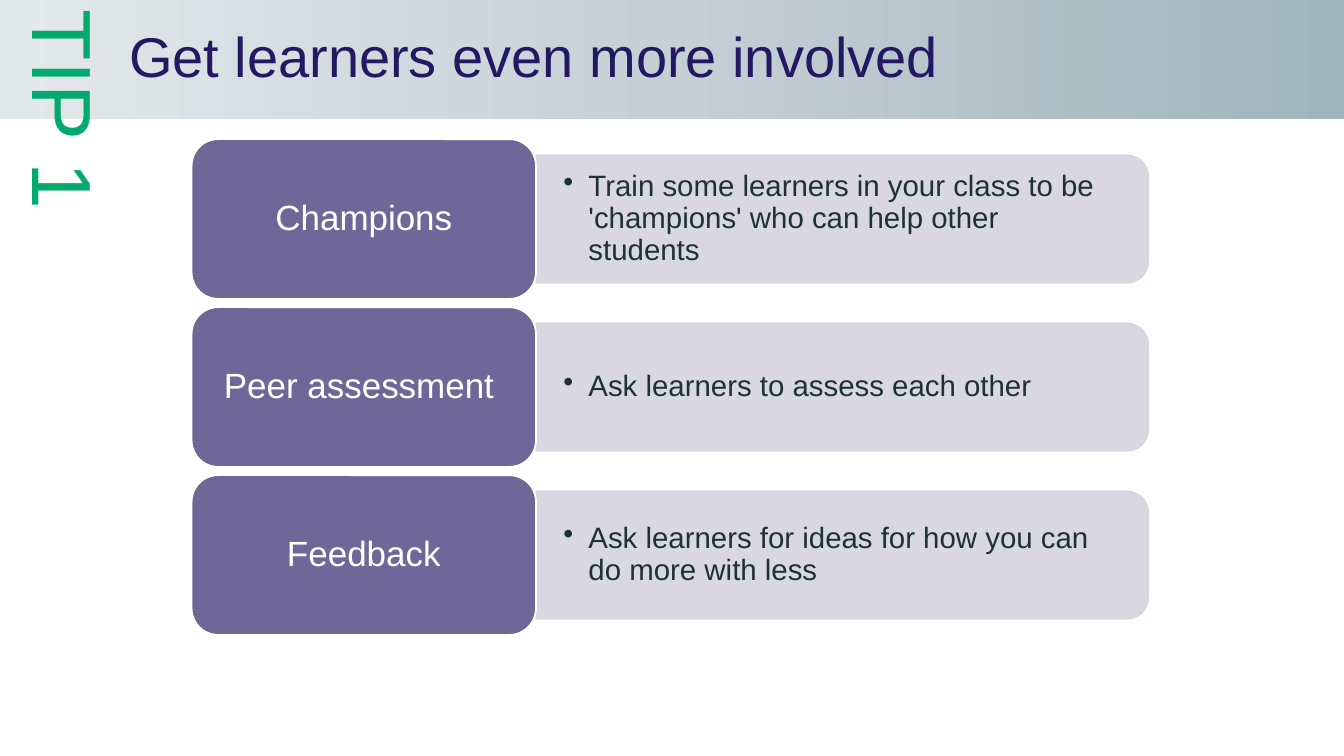
from copy import deepcopy
from pptx import Presentation
from pptx import util as u
from pptx.dml import color as dc
from pptx.enum import shapes as es, text as et
from pptx.oxml import parse_xml
from pptx.oxml import ns

HUES = {"title": "251863", "tip": "02AA6D", "label": "6F6798", "bar": "D5D3DD",
        "ink": "1D3138", "white": "FFFFFF"}
FADE = [("A0B4BD", 0), ("C5D0D5", 0.5), ("E3E8EA", 1)]
ROWS = [
    ("Champions", "Train some learners in your class to be 'champions' who can help other students"),
    ("Peer assessment ", "Ask learners to assess each other"),
    ("Feedback", "Ask learners for ideas for how you can do more with less"),
]


def hue(name):
    return dc.RGBColor.from_string(HUES[name])


def span(*sizes):
    return [u.Inches(size) for size in sizes]


def write(shape, words, size, color, align=et.PP_ALIGN.LEFT, left=0, hang=0,
          bullet=False, spacing=None, pads=(0.1, 0.05), anchor=et.MSO_ANCHOR.MIDDLE,
          fit=et.MSO_AUTO_SIZE.NONE):
    frame = shape.text_frame
    frame.word_wrap = True
    frame.auto_size = fit
    frame.vertical_anchor = anchor
    frame.margin_left = frame.margin_right = u.Inches(pads[0])
    frame.margin_top = frame.margin_bottom = u.Inches(pads[1])
    para = frame.paragraphs[0]
    para.alignment = align
    para.line_spacing = spacing
    props = para._p.get_or_add_pPr()
    props.set("marL", str(u.Inches(left)))
    props.set("indent", str(u.Inches(hang)))
    if bullet:
        props.append(parse_xml(f'<a:buChar {ns.nsdecls("a")} char="•"/>'))
    run = para.add_run()
    run.text = words
    run.font.name = "Arial"
    run.font.size = u.Pt(size)
    run.font.color.rgb = hue(color)


def panel(slide, kind, box, fill, line, width):
    shape = slide.shapes.add_shape(kind, *span(*box))
    shape.shadow.inherit = False
    shape.fill.solid()
    shape.fill.fore_color.rgb = hue(fill)
    shape.line.color.rgb = hue(line)
    shape.line.width = u.Pt(width)
    return shape


def fade(shape):
    shape.fill.gradient()
    shape.fill.gradient_angle = 180
    first = shape._element.spPr.find(".//" + ns.qn("a:gs"))
    first.addnext(deepcopy(first))
    for stop, (color, place) in zip(shape.fill.gradient_stops, FADE):
        stop.color.rgb = dc.RGBColor.from_string(color)
        stop.position = place


def header(slide, x, y, w, h):
    title = slide.shapes.title
    title.left, title.top, title.width, title.height = span(x, y, w, h)
    fade(title)
    write(title, "Get learners even more involved", 40, "title", left=1.18, spacing=0.9)


def tip(slide, x, y, w, h):
    side = slide.shapes.add_textbox(*span(x, y, w, h))
    write(side, "TIP 1", 60, "tip", align=et.PP_ALIGN.CENTER,
          anchor=et.MSO_ANCHOR.TOP, fit=et.MSO_AUTO_SIZE.SHAPE_TO_FIT_TEXT)
    side.text_frame._txBody.bodyPr.set("vert", "eaVert")


def row(slide, label, detail, x, y, w, h):
    split = 0.36 * w
    wide, high = w - split, 0.8 * h
    start, top = x + split, y + 0.1 * h
    bar = panel(slide, es.MSO_SHAPE.ROUND_2_SAME_RECTANGLE,
                (start + (wide - high) / 2, top + (high - wide) / 2, high, wide),
                "bar", "bar", 0.85)
    bar.rotation = 90
    for tint in bar._element.spPr.iter(ns.qn("a:srgbClr")):
        tint.append(parse_xml(f'<a:alpha {ns.nsdecls("a")} val="90000"/>'))
    note = slide.shapes.add_textbox(*span(start, top + 0.06, wide - 0.06, high - 0.12))
    write(note, detail, 21, "ink", left=0.25, hang=-0.25, bullet=True,
          spacing=0.9, pads=(0.27, 0.14))
    tab = panel(slide, es.MSO_SHAPE.ROUNDED_RECTANGLE, (x, y, split, h),
                "label", "white", 1.35)
    write(tab, label, 25, "white", align=et.PP_ALIGN.CENTER, spacing=0.9)


def table(slide, x, y, w, h, gap):
    high = (h - gap * (len(ROWS) - 1)) / len(ROWS)
    for place, (label, detail) in enumerate(ROWS):
        row(slide, label, detail, x, y + place * (high + gap), w, high)


def main():
    deck = Presentation()
    deck.slide_width, deck.slide_height = span(13.33, 7.5)
    slide = deck.slides.add_slide(deck.slide_layouts[5])
    header(slide, 0, 0, 13.33, 1.18)
    tip(slide, 0, 0, 1.21, 7.5)
    table(slide, 1.9, 1.38, 9.49, 4.92, 0.08)
    deck.save("out.pptx")


if __name__ == "__main__":
    main()
